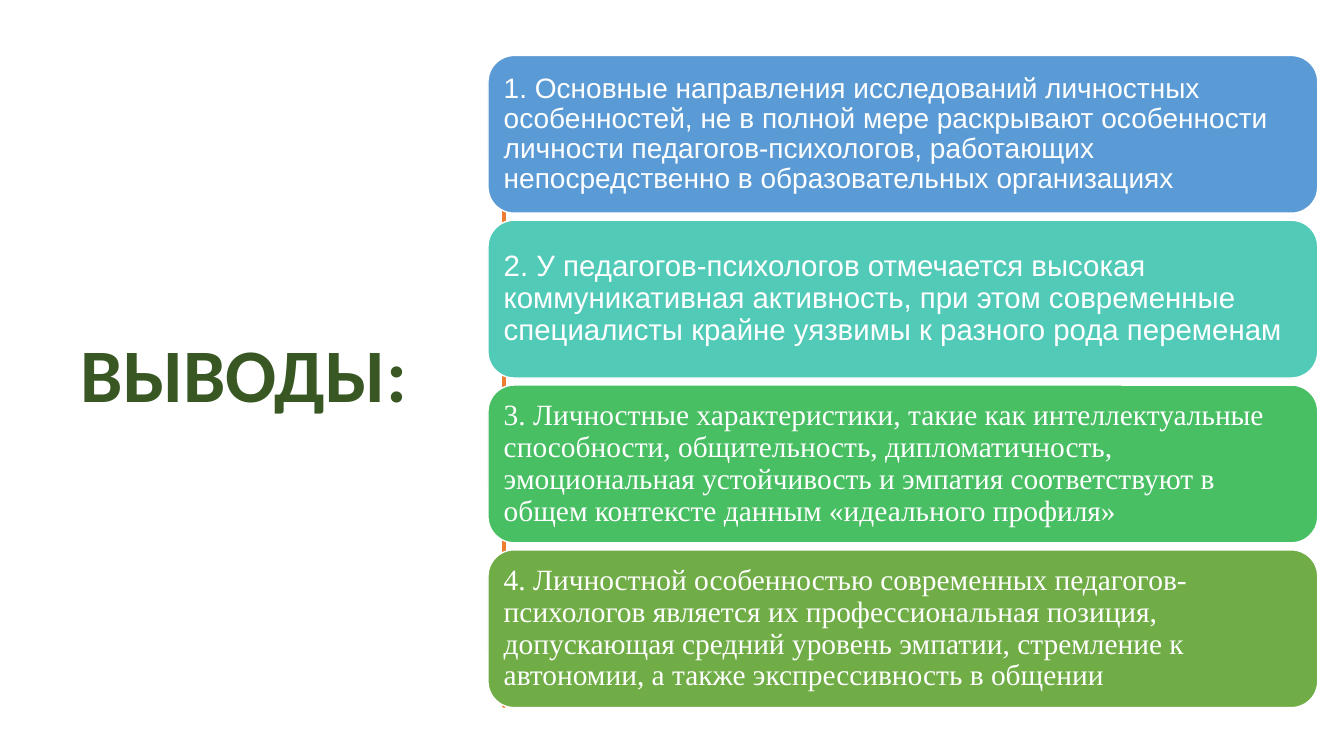
from pptx import Presentation
from pptx.dml.color import RGBColor
from pptx.enum import shapes, text
from pptx.util import Inches, Pt

CONCLUSIONS = [
    ("1. Основные направления исследований личностных особенностей, не в полной мере "
     "раскрывают особенности личности педагогов-психологов, работающих непосредственно "
     "в образовательных организациях", "5B9BD5", "Arial", 20),
    ("2. У педагогов-психологов отмечается высокая коммуникативная активность, при этом "
     "современные специалисты крайне уязвимы к разного рода переменам",
     "52CAB8", "Arial", 21),
    ("3. Личностные характеристики, такие как интеллектуальные способности, "
     "общительность, дипломатичность, эмоциональная устойчивость и эмпатия "
     "соответствуют в общем контексте данным «идеального профиля»",
     "49BF64", "Times New Roman", 21),
    ("4. Личностной особенностью современных педагогов-психологов является их "
     "профессиональная позиция, допускающая средний уровень эмпатии, стремление к "
     "автономии, а также экспрессивность в общении", "70AD47", "Times New Roman", 21),
]

# Edges of the hand-drawn divider, relative to its top left corner
DIVIDER_RIGHT = [(0.02, 0), (0.04, 0.3), (0.02, 0.62), (0.01, 1.05), (0.02, 1.42),
                 (0.02, 2.1), (0.03, 2.45), (0.02, 2.72), (0.03, 3.15), (0.02, 3.52),
                 (0, 3.88), (0.02, 4.26), (0.04, 4.63), (0.02, 5), (0.02, 5.92)]
DIVIDER_LEFT = [(0, 5.92), (-0.01, 5.1), (0, 4.73), (0, 3.93), (0.01, 3.6),
                (0, 3.31), (0, 2.51), (0, 1.66), (0, 1.2), (-0.02, 0.97),
                (0.01, 0.4), (0, 0)]


def color(hex_string):
    return RGBColor.from_string(hex_string)


def style_paragraph(paragraph, font_name, size, hex_string, bold=False):
    paragraph.alignment = text.PP_ALIGN.LEFT
    paragraph.line_spacing = 0.9
    font = paragraph.font
    font.name, font.size, font.bold = font_name, Pt(size), bold
    font.color.rgb = color(hex_string)


def paint(shape, fill, line, line_width):
    shape.shadow.inherit = False
    shape.fill.solid()
    shape.fill.fore_color.rgb = color(fill)
    shape.line.color.rgb = color(line)
    shape.line.width = Pt(line_width)


def place_title(slide, left, top, width, height):
    title = slide.shapes.title
    title.left, title.top = Inches(left), Inches(top)
    title.width, title.height = Inches(width), Inches(height)
    frame = title.text_frame
    frame.text = "ВЫВОДЫ:"
    frame.word_wrap = True
    frame.auto_size = text.MSO_AUTO_SIZE.NONE
    frame.vertical_anchor = text.MSO_ANCHOR.MIDDLE
    style_paragraph(frame.paragraphs[0], "Calibri", 54, "385723", bold=True)


def draw_divider(slide, left, top):
    outline = [(left + x, top + y) for x, y in DIVIDER_RIGHT + DIVIDER_LEFT]
    builder = slide.shapes.build_freeform(*outline[0], scale=Inches(1))
    builder.add_line_segments(outline[1:], close=True)
    paint(builder.convert_to_shape(), "ED7D31", "ED7D31", 3.25)


def stack_conclusions(slide, left, top, width, height, gap=0.07):
    card_height = (height - gap * (len(CONCLUSIONS) - 1)) / len(CONCLUSIONS)
    for row, (wording, fill, font_name, size) in enumerate(CONCLUSIONS):
        card = slide.shapes.add_shape(
            shapes.MSO_SHAPE.ROUNDED_RECTANGLE, Inches(left),
            Inches(top + row * (card_height + gap)), Inches(width), Inches(card_height))
        paint(card, fill, "FFFFFF", 1)
        frame = card.text_frame
        frame.text = wording
        frame.word_wrap = True
        frame.vertical_anchor = text.MSO_ANCHOR.MIDDLE
        frame.margin_left = frame.margin_right = Inches(0.08)
        frame.margin_top = frame.margin_bottom = Inches(0.08)
        style_paragraph(frame.paragraphs[0], font_name, size, "FFFFFF")


def main():
    deck = Presentation()
    deck.slide_width, deck.slide_height = Inches(13.33), Inches(7.5)
    slide = deck.slides.add_slide(deck.slide_layouts[5])
    place_title(slide, 0.7, 2.34, 3.45, 2.82)
    draw_divider(slide, 4.73, 0.84)
    stack_conclusions(slide, 4.84, 0.55, 8.23, 6.47)
    deck.save("out.pptx")


if __name__ == "__main__":
    main()
